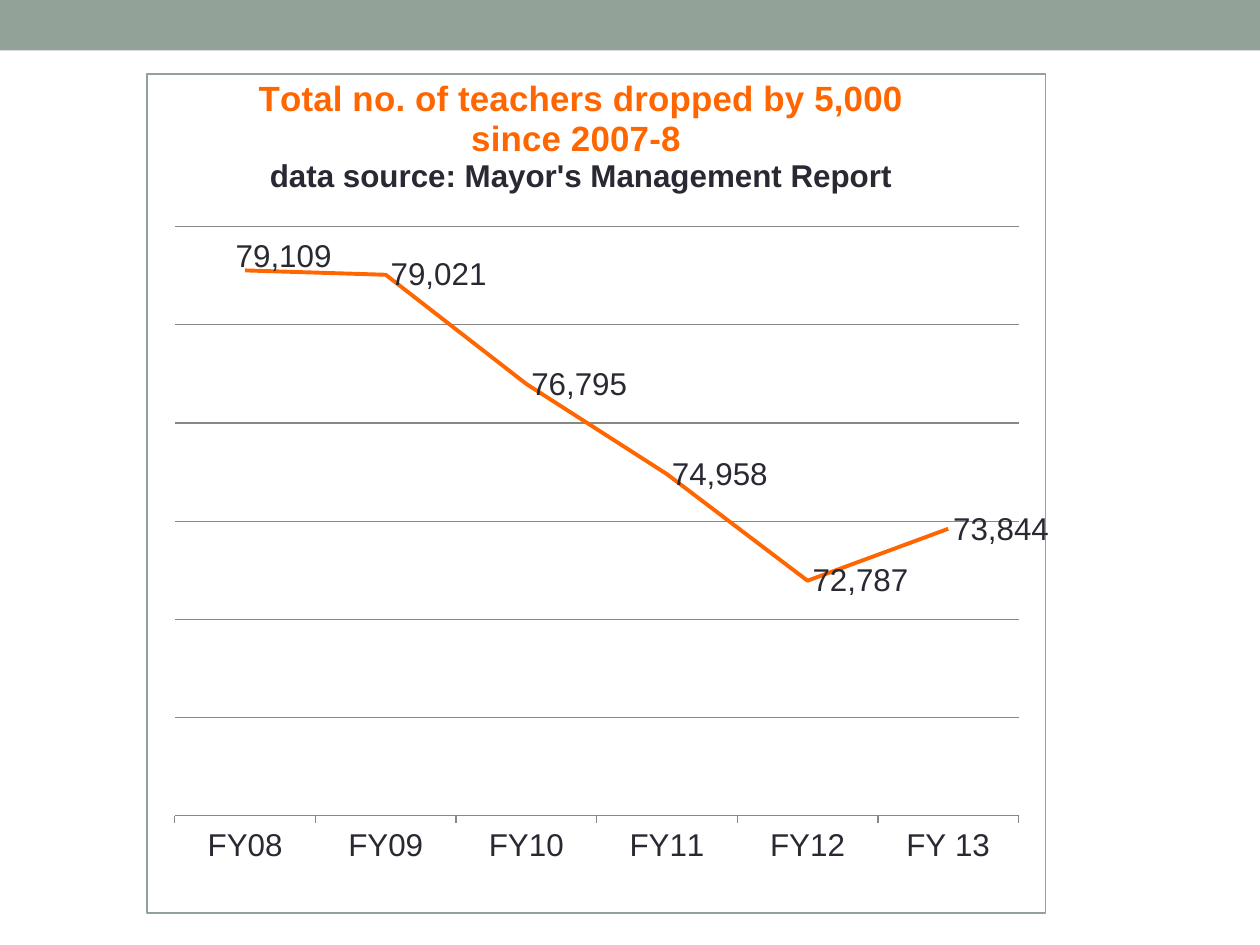
from lxml.etree import SubElement
from pptx import Presentation
from pptx.chart.data import CategoryChartData
from pptx.dml.color import RGBColor
from pptx.enum.chart import XL_CHART_TYPE as ChartType
from pptx.enum.chart import XL_LABEL_POSITION as LabelPosition
from pptx.enum.chart import XL_TICK_LABEL_POSITION as TickLabels
from pptx.enum.chart import XL_TICK_MARK as TickMark
from pptx.enum.shapes import MSO_SHAPE as Shape
from pptx.oxml import parse_xml
from pptx.oxml.ns import nsdecls, qn
from pptx.util import Cm, Pt

COLORS = {"sage": "93A299", "orange": "FF6600", "ink": "292934", "grid": "878787"}
TEACHERS = {
    "FY08": 79109,
    "FY09": 79021,
    "FY10": 76795,
    "FY11": 74958,
    "FY12": 72787,
    "FY 13": 73844,
}
TITLE = [
    ("Total no. of teachers dropped by 5,000 since 2007-8 ", 20, "orange"),
    ("data source: Mayor's Management Report", 18, "ink"),
]


def style_font(font, size, color, bold=False):
    for name, value in {"name": "Arial", "size": Pt(size), "bold": bold}.items():
        setattr(font, name, value)
    font.color.rgb = RGBColor.from_string(COLORS[color])


def manual_layout(**values):
    """Return a c:layout element; lengths are fractions of the chart."""
    layout = parse_xml(f"<c:layout {nsdecls('c')}><c:manualLayout/></c:layout>")
    for name, value in values.items():
        SubElement(layout[0], qn(f"c:{name}")).set("val", str(value))
    return layout


deck = Presentation()
deck.slide_width, deck.slide_height = Cm(25.4), Cm(19.05)
page = deck.slides.add_slide(deck.slide_layouts[6])

# Top band
band = page.shapes.add_shape(Shape.RECTANGLE, 0, 0, deck.slide_width, Cm(1.02))
band.shadow.inherit = False
band.fill.solid()
band.fill.fore_color.rgb = RGBColor.from_string(COLORS["sage"])
band.line.fill.background()

# Line chart
data = CategoryChartData(number_format="#,##0")
data.categories = list(TEACHERS)
data.add_series("Series 1", list(TEACHERS.values()))
chart = page.shapes.add_chart(
    ChartType.LINE, Cm(2.95), Cm(1.48), Cm(18.2), Cm(16.94), data
).chart
style_font(chart.font, 10, "ink")
chart.has_legend = False

# Chart title
title = chart.chart_title
frame = title.text_frame
title.include_in_layout = False
for index, (text, size, color) in enumerate(TITLE):
    para = frame.add_paragraph() if index else frame.paragraphs[0]
    span = para.add_run()
    span.text = text
    style_font(span.font, size, color, bold=True)
title_xml = title._element
for old in title_xml.findall(qn("c:layout")):
    title_xml.remove(old)
title_xml.find(qn("c:tx")).addnext(
    manual_layout(xMode="edge", yMode="edge", x=0.12, y=0)
)

# Axes
years, counts = chart.category_axis, chart.value_axis
years.major_tick_mark = TickMark.OUTSIDE
years.tick_label_position = TickLabels.LOW
style_font(years.tick_labels.font, 18, "ink")
scale = {
    "minimum_scale": 68000,
    "maximum_scale": 80000,
    "major_unit": 2000,
    "has_major_gridlines": True,
    "visible": False,
}
for name, value in scale.items():
    setattr(counts, name, value)
for line in (years.format.line, counts.major_gridlines.format.line):
    line.color.rgb = RGBColor.from_string(COLORS["grid"])
    line.width = Pt(0.75)

# Series and its labels
plot = chart.plots[0]
plot.vary_by_categories = False
series = plot.series[0]
series.smooth = False
series.format.line.color.rgb = RGBColor.from_string(COLORS["orange"])
series.format.line.width = Pt(2.25)
labels = series.data_labels
for name, value in {
    "show_value": True,
    "number_format": "#,##0",
    "number_format_is_linked": False,
    "position": LabelPosition.RIGHT,
}.items():
    setattr(labels, name, value)
style_font(labels.font, 18, "ink")

# The first label is lifted clear of the line
first = series.points[0].data_label
style_font(first.font, 18, "ink")
first.position = LabelPosition.RIGHT
first_xml = series._element.find(f".//{qn('c:dLbl')}")
first_xml.find(qn("c:idx")).addnext(manual_layout(x=-0.016, y=-0.017))

# Plot area and chart border
area = chart._chartSpace.chart.plotArea
for old in area.findall(qn("c:layout")):
    area.remove(old)
area.insert(0, manual_layout(
    layoutTarget="inner", xMode="edge", yMode="edge", x=0.031, y=0.182, w=0.939, h=0.702
))
chart._chartSpace.chart.addnext(parse_xml(
    f"<c:spPr {nsdecls('c', 'a')}><a:noFill/><a:ln w=\"{Pt(0.75)}\"><a:solidFill>"
    f"<a:srgbClr val=\"{COLORS['sage']}\"/></a:solidFill></a:ln></c:spPr>"
))

deck.save("out.pptx")
